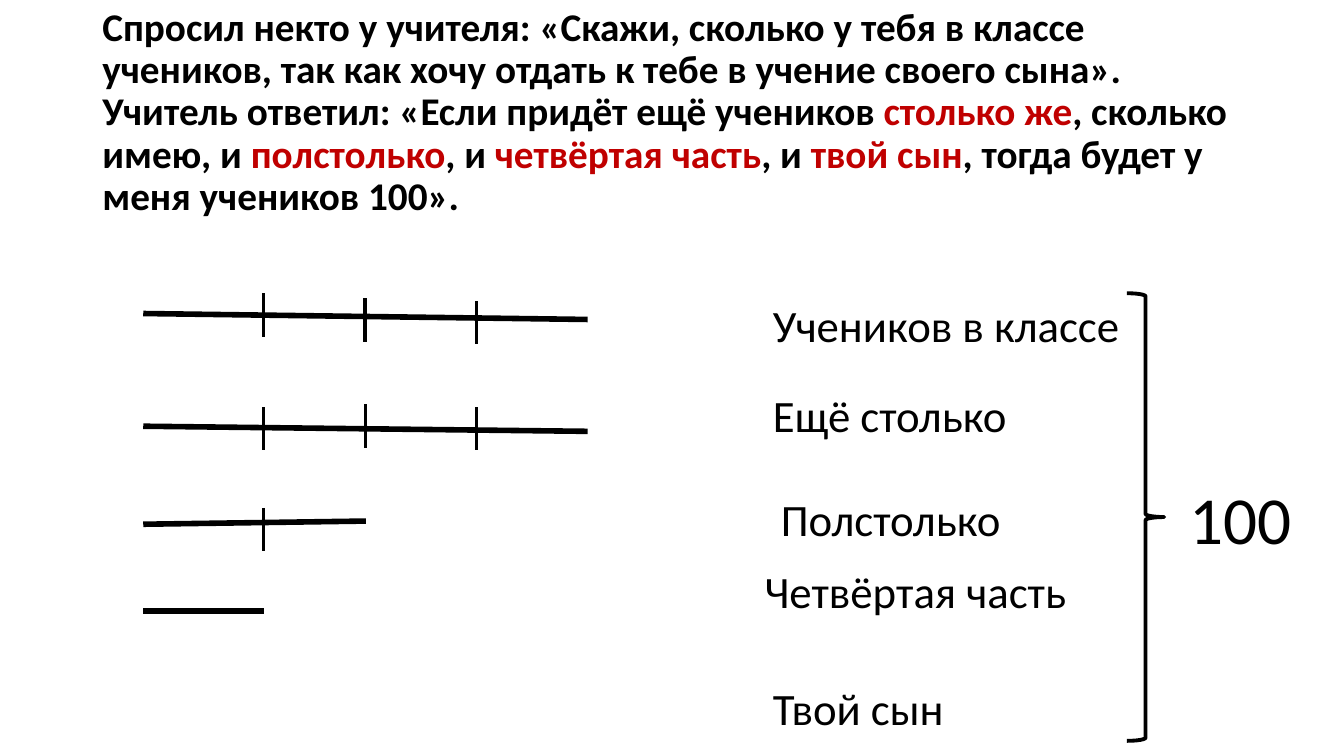
import pptx
import pptx.dml.color
import pptx.enum.shapes
import pptx.enum.text
import pptx.oxml.ns
import pptx.util
from lxml import etree

Cm = pptx.util.Cm
Pt = pptx.util.Pt

FONT = "Calibri"
BLACK = "000000"
RED = "C00000"

PROBLEM = [
    ("Спросил некто у учителя: «Скажи, сколько у тебя в классе учеников, "
     "так как хочу отдать к тебе в учение своего сына». Учитель ответил: "
     "«Если придёт ещё учеников ", BLACK),
    ("столько же", RED),
    (", сколько имею, и ", BLACK),
    ("полстолько", RED),
    (", и ", BLACK),
    ("четвёртая часть", RED),
    (", и ", BLACK),
    ("твой сын", RED),
    (", тогда будет у меня учеников 100».", BLACK),
]

# Segments: start height, end x, end height, ticks as (x, top)
SEGMENT_LEFT = 3.61
TICK_HEIGHT = 1.09
SEGMENTS = [
    (7.9, 14.81, 8.05, [(6.65, 7.39), (9.2, 7.52), (12.01, 7.59)]),
    (10.74, 14.81, 10.87, [(6.65, 10.26), (9.22, 10.19), (12.01, 10.26)]),
    (13.21, 9.22, 13.13, [(6.65, 12.8)]),
    (15.39, 6.65, 15.39, []),
]

# Labels: text, left, top, width
LABELS = [
    ("Учеников в классе", 19.23, 7.39, 11.05),
    ("Ещё столько", 19.23, 9.65, 7.92),
    ("Полстолько", 19.43, 12.27, 7.52),
    ("Четвёртая часть", 19.02, 14.07, 11.46),
    ("Твой сын", 19.23, 17.04, 7.92),
]


def color(value):
    return pptx.dml.color.RGBColor.from_string(value)


def add_text(slide, pieces, left, top, width, height, size, bold=False):
    """Add a one-paragraph text box made of (text, colour) pieces."""
    box = slide.shapes.add_textbox(Cm(left), Cm(top), Cm(width), Cm(height))
    box.text_frame.word_wrap = True
    paragraph = box.text_frame.paragraphs[0]
    for text, value in pieces:
        run = paragraph.add_run()
        run.text = text
        run.font.name = FONT
        run.font.size = Pt(size)
        run.font.bold = bold
        run.font.color.rgb = color(value)
    return box


def add_line(slide, start_x, start_y, end_x, end_y, width):
    line = slide.shapes.add_connector(
        pptx.enum.shapes.MSO_CONNECTOR.STRAIGHT,
        Cm(start_x), Cm(start_y), Cm(end_x), Cm(end_y))
    line.line.color.rgb = color(BLACK)
    line.line.width = Pt(width)
    # An empty effect list removes the theme shadow
    properties = line._element.spPr
    etree.SubElement(properties, pptx.oxml.ns.qn("a:effectLst"))


def add_segment(slide, start_y, end_x, end_y, ticks):
    add_line(slide, SEGMENT_LEFT, start_y, end_x, end_y, 4)
    for x, top in ticks:
        add_line(slide, x, top, x, top + TICK_HEIGHT, 2.25)


def add_brace(slide, left, top, width, height):
    brace = slide.shapes.add_shape(
        pptx.enum.shapes.MSO_SHAPE.RIGHT_BRACE,
        Cm(left), Cm(top), Cm(width), Cm(height))
    brace.shadow.inherit = False
    brace.fill.background()
    brace.line.color.rgb = color(BLACK)
    brace.line.width = Pt(2.75)


def main():
    presentation = pptx.Presentation()
    presentation.slide_width = Cm(33.87)
    presentation.slide_height = Cm(19.05)
    slide = presentation.slides.add_slide(presentation.slide_layouts[6])

    # Problem statement
    title = add_text(slide, PROBLEM, 2.33, 1.01, 29.21, 3.68, 28, bold=True)
    title.text_frame.vertical_anchor = pptx.enum.text.MSO_ANCHOR.MIDDLE
    title.text_frame.paragraphs[0].line_spacing = 0.9

    # Segment diagram
    for segment in SEGMENTS:
        add_segment(slide, *segment)

    # Segment names
    for text, left, top, width in LABELS:
        add_text(slide, [(text, BLACK)], left, top, width, 1.62, 32)

    # Total
    add_brace(slide, 28.4, 7.39, 0.94, 11.28)
    add_text(slide, [("100", BLACK)], 29.74, 11.91, 3.53, 2.31, 48)

    presentation.save("out.pptx")


if __name__ == "__main__":
    main()
